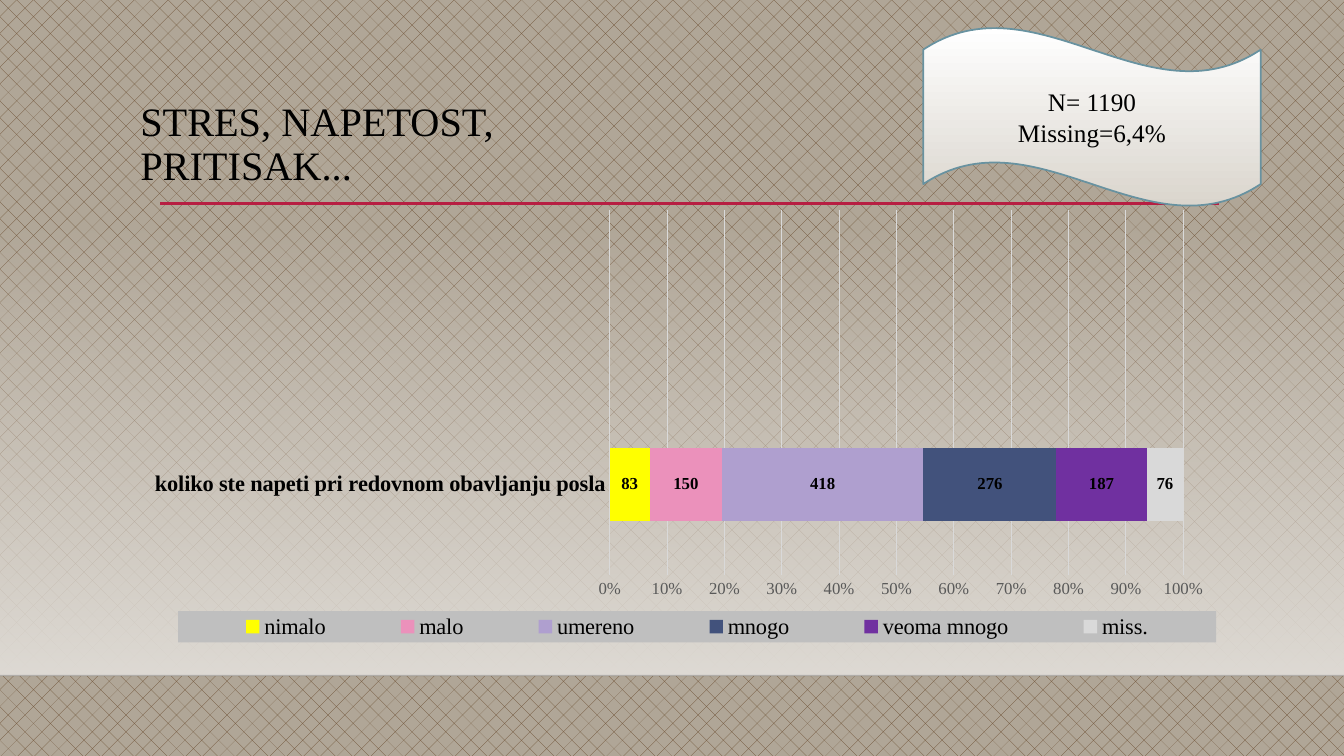
from pptx import Presentation
from pptx import util as u
from pptx.chart.data import CategoryChartData
from pptx.dml.color import RGBColor
from pptx.enum import chart as ch, dml, shapes, text
from pptx.oxml import parse_xml
from pptx.oxml.ns import nsdecls, qn

FONT = "Times New Roman"
CATEGORIES = ["koliko ste napeti pri redovnom obavljanju posla", ""]
ANSWERS = [
    ("nimalo", 83, "FFFF00"),
    ("malo", 150, "EB91BB"),
    ("umereno", 418, "AF9FCF"),
    ("mnogo", 276, "42527C"),
    ("veoma mnogo", 187, "7030A0"),
    ("miss.", 76, "D9D9D9"),
]


def rgb(value):
    return RGBColor.from_string(value)


def assign(obj, **values):
    for name, value in values.items():
        setattr(obj, name, value)


def style_font(font, size, color="000000", bold=False):
    assign(font, name=FONT, size=u.Pt(size), bold=bold)
    font.color.rgb = rgb(color)


def solid(fill, color):
    fill.solid()
    fill.fore_color.rgb = rgb(color)


def set_alpha(color_element, percent):
    color_element.append(parse_xml(
        f'<a:alpha {nsdecls("a")} val="{percent * 1000}"/>'))


def shade_down(fill, top, bottom):
    fill.gradient()
    fill.gradient_angle = 270
    for stop, color in zip(fill.gradient_stops, (top, bottom)):
        stop.color.rgb = rgb(color)


def add_rule(s, x1, x2, y, color, width):
    line = s.shapes.add_connector(
        shapes.MSO_CONNECTOR.STRAIGHT, u.Pt(x1), u.Pt(y), u.Pt(x2), u.Pt(y))
    line.line.width = u.Pt(width)
    line.line.color.rgb = rgb(color)
    line._element.spPr.append(parse_xml(f'<a:effectLst {nsdecls("a")}/>'))
    return line


def add_backdrop(s, x, y, w, h):
    fill = s.background.fill
    fill.patterned()
    fill.pattern = dml.MSO_PATTERN.DOTTED_DIAMOND
    fill.fore_color.rgb = rgb("6A4C2E")
    fill.back_color.rgb = rgb("B0A697")
    sp = s.shapes.add_shape(
        shapes.MSO_SHAPE.RECTANGLE, u.Pt(x), u.Pt(y), u.Pt(w), u.Pt(h))
    sp.shadow.inherit = False
    sp.line.fill.background()
    shade_down(sp.fill, "DFDBD5", "DFDBD5")
    set_alpha(next(sp._element.spPr.iter(qn("a:srgbClr"))), 0)
    edge = add_rule(s, x, x + w, y + h, "000001", 1)
    set_alpha(next(edge._element.spPr.iter(qn("a:srgbClr"))), 20)


def add_title(s, x, y, w, h):
    title = s.shapes.title
    assign(title, left=u.Pt(x), top=u.Pt(y), width=u.Pt(w), height=u.Pt(h))
    tf = title.text_frame
    assign(tf, text="STRES, NAPETOST, PRITISAK...", word_wrap=True,
           auto_size=text.MSO_AUTO_SIZE.NONE,
           vertical_anchor=text.MSO_ANCHOR.TOP)
    p = tf.paragraphs[0]
    assign(p, alignment=text.PP_ALIGN.LEFT, line_spacing=0.9)
    style_font(p.runs[0].font, 28.8)


def add_layout(parent, index, x, y, w, h, inner=False):
    target = '<c:layoutTarget val="inner"/>' if inner else ""
    sizes = "".join(f'<c:{tag} val="{value}"/>'
                    for tag, value in zip("xywh", (x, y, w, h)))
    for old in parent.findall(qn("c:layout")):
        parent.remove(old)
    parent.insert(index, parse_xml(
        f'<c:layout {nsdecls("c")}><c:manualLayout>{target}'
        f'<c:xMode val="edge"/><c:yMode val="edge"/>{sizes}'
        '</c:manualLayout></c:layout>'))


def add_answer_chart(s, x, y, w, h):
    data = CategoryChartData()
    data.categories = CATEGORIES
    for name, count, _ in ANSWERS:
        data.add_series(name, (count, None))
    chart = s.shapes.add_chart(
        ch.XL_CHART_TYPE.BAR_STACKED_100,
        u.Pt(x), u.Pt(y), u.Pt(w), u.Pt(h), data).chart
    assign(chart, has_title=False, has_legend=True)
    style_font(chart.font, 10)

    plot = chart.plots[0]
    assign(plot, gap_width=150, overlap=100, vary_by_categories=False)
    for series, (_, _, color) in zip(plot.series, ANSWERS):
        solid(series.format.fill, color)
        labels = series.data_labels
        assign(labels, show_value=True, position=ch.XL_LABEL_POSITION.CENTER)
        style_font(labels.font, 12, bold=True)

    for axis, size, color, bold in ((chart.category_axis, 16, "000000", True),
                                    (chart.value_axis, 12, "595959", False)):
        assign(axis, major_tick_mark=ch.XL_TICK_MARK.NONE,
               minor_tick_mark=ch.XL_TICK_MARK.NONE)
        axis.format.line.fill.background()
        style_font(axis.tick_labels.font, size, color, bold)
    values = chart.value_axis
    assign(values, has_major_gridlines=True, minimum_scale=0,
           maximum_scale=1, major_unit=0.1)
    assign(values.tick_labels, number_format="0%",
           number_format_is_linked=False)
    grid = values.major_gridlines.format.line
    grid.width = u.Pt(0.75)
    grid.color.rgb = rgb("D9D9D9")

    legend = chart.legend
    assign(legend, position=ch.XL_LEGEND_POSITION.BOTTOM,
           include_in_layout=False)
    style_font(legend.font, 16)
    box = legend._element
    add_layout(box, 1, 0.04, 0.92, 0.95, 0.07)
    box.find(qn("c:txPr")).addprevious(parse_xml(
        f'<c:spPr {nsdecls("c", "a")}><a:solidFill>'
        '<a:srgbClr val="BFBFBF"/></a:solidFill></c:spPr>'))
    add_layout(chart._chartSpace.chart.plotArea, 0,
               0.435, 0.02, 0.525, 0.82, inner=True)


def add_sample_note(s, x, y, w, h):
    sp = s.shapes.add_shape(
        shapes.MSO_SHAPE.WAVE, u.Pt(x), u.Pt(y), u.Pt(w), u.Pt(h))
    sp.shadow.inherit = False
    shade_down(sp.fill, "FFFFFF", "DAD5CD")
    sp.line.width = u.Pt(1.25)
    sp.line.color.rgb = rgb("6892A0")
    tf = sp.text_frame
    assign(tf, text="N= 1190\nMissing=6,4%", word_wrap=True,
           vertical_anchor=text.MSO_ANCHOR.MIDDLE)
    for p in tf.paragraphs:
        p.alignment = text.PP_ALIGN.CENTER
        style_font(p.runs[0].font, 18)


def main():
    prs = Presentation()
    assign(prs, slide_width=u.Pt(960), slide_height=u.Pt(540))
    s = prs.slides.add_slide(prs.slide_layouts[5])
    add_backdrop(s, 0, 159, 960, 323.5)
    add_rule(s, 114.5, 871, 145.5, "B71E42", 2.5)
    add_title(s, 93, 69, 384.5, 56)
    add_answer_chart(s, 96, 144, 780.5, 318)
    add_sample_note(s, 659.5, 19.5, 241, 128)
    prs.save("out.pptx")


if __name__ == "__main__":
    main()
